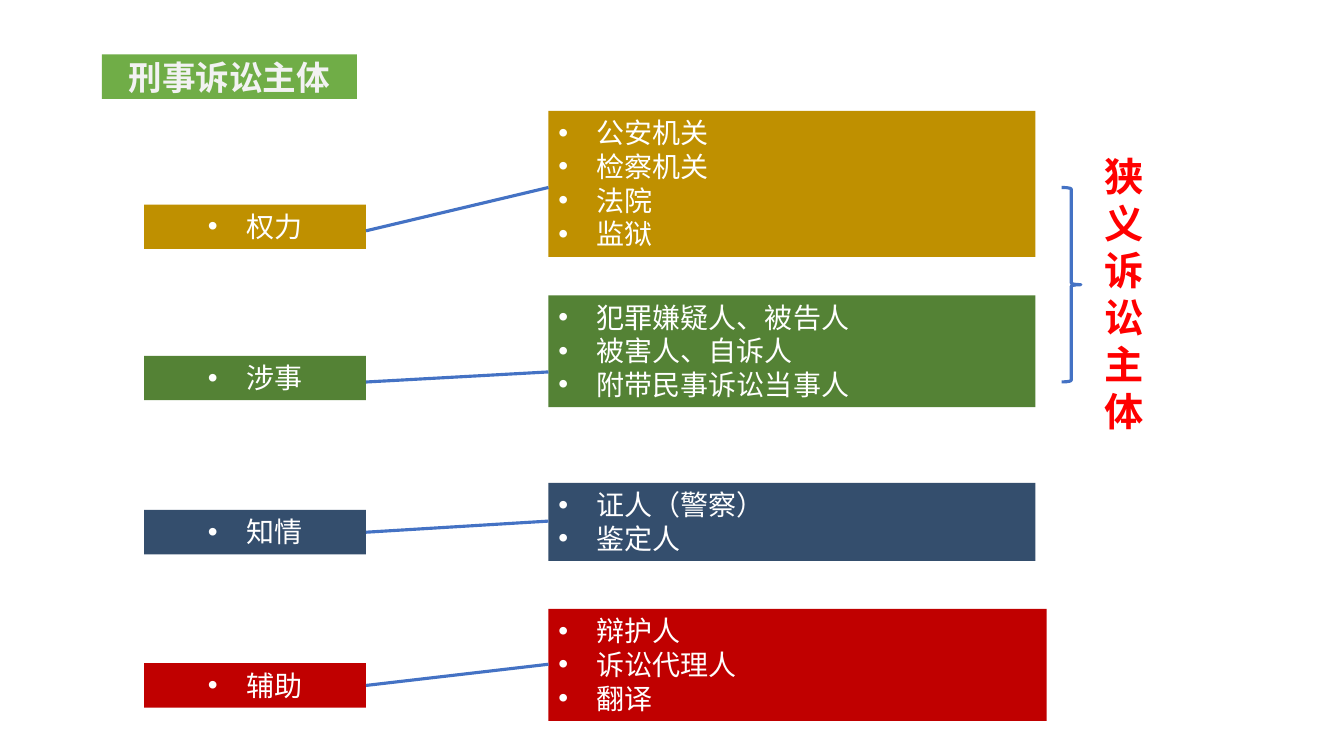
from typing import NamedTuple

from lxml.etree import SubElement
from pptx import Presentation
from pptx.dml.color import RGBColor
from pptx.enum.shapes import MSO_CONNECTOR, MSO_SHAPE
from pptx.enum.text import MSO_ANCHOR, PP_ALIGN
from pptx.oxml.ns import qn
from pptx.util import Inches, Pt

GOLD = RGBColor(0xBF, 0x90, 0x00)
GREEN = RGBColor(0x54, 0x82, 0x35)
NAVY = RGBColor(0x34, 0x4E, 0x6D)
CRIMSON = RGBColor(0xC0, 0x00, 0x00)
LEAF = RGBColor(0x70, 0xAD, 0x47)
BLUE = RGBColor(0x44, 0x72, 0xC4)
RED = RGBColor(0xFF, 0x00, 0x00)
WHITE = RGBColor(0xFF, 0xFF, 0xFF)
PALE = RGBColor(0xF2, 0xF2, 0xF2)

FONT = "Noto Sans CJK JP"
CELL = Inches(0.1)
LABEL_LEFT, LABEL_WIDTH, LABEL_HEIGHT = 14.3, 22, 4.4
LIST_LEFT, LIST_WIDTH = 54.4, 48.3
LINE_HEIGHT, LIST_PADDING = 3.37, 1


class Party(NamedTuple):
    """One group of participants, with offsets in grid cells from its top."""
    label: str
    members: list
    color: RGBColor
    top: float
    label_drop: float
    link_start: float
    link_end: float
    width: float = LIST_WIDTH


PARTIES = [
    Party("权力", ["公安机关", "检察机关", "法院", "监狱"], GOLD, 11, 9.3, 11.9, 7.6),
    Party("涉事", ["犯罪嫌疑人、被告人", "被害人、自诉人", "附带民事诉讼当事人"],
          GREEN, 29.3, 6, 8.6, 7.6),
    Party("知情", ["证人（警察）", "鉴定人"], NAVY, 47.9, 2.7, 4.9, 3.8),
    Party("辅助", ["辩护人", "诉讼代理人", "翻译"], CRIMSON, 60.4, 5.4, 7.6, 5.5, 49.4),
]


def grid(*cells):
    """Convert grid cells to slide lengths."""
    return [round(cell * CELL) for cell in cells]


def write(shape, lines, size=20, color=WHITE, bold=False, align=PP_ALIGN.LEFT,
          anchor=MSO_ANCHOR.TOP, bullets=False):
    """Fill a shape with formatted paragraphs."""
    frame = shape.text_frame
    frame.word_wrap = True
    frame.vertical_anchor = anchor
    frame.text = "\n".join(lines)
    for paragraph in frame.paragraphs:
        paragraph.alignment = align
        paragraph.line_spacing = Pt(size * 1.2)
        if bullets:
            properties = paragraph._p.get_or_add_pPr()
            properties.set("marL", str(Inches(0.38)))
            properties.set("indent", str(-Inches(0.38)))
            SubElement(properties, qn("a:buFont"), typeface="Arial")
            SubElement(properties, qn("a:buChar"), char="•")
        for run in paragraph.runs:
            run.font.size = Pt(size)
            run.font.bold = bold
            run.font.color.rgb = color
            run.font.name = FONT
            SubElement(run._r.get_or_add_rPr(), qn("a:ea"), typeface=FONT)


def add_block(slide, box, color, lines, align):
    """Draw a filled rectangle holding a bulleted list."""
    block = slide.shapes.add_shape(MSO_SHAPE.RECTANGLE, *grid(*box))
    block.shadow.inherit = False
    block.fill.solid()
    block.fill.fore_color.rgb = color
    block.line.fill.background()
    write(block, lines, align=align, bullets=True)


def add_link(slide, *ends):
    """Join a label to its list with a straight line."""
    link = slide.shapes.add_connector(MSO_CONNECTOR.STRAIGHT, *grid(*ends))
    link.line.color.rgb = BLUE
    link.line.width = Pt(2.25)
    SubElement(link._element.spPr, qn("a:effectLst"))


def add_party(slide, party):
    """Place a label, its member list and the link between them."""
    label_box = (LABEL_LEFT, party.top + party.label_drop, LABEL_WIDTH, LABEL_HEIGHT)
    list_height = len(party.members) * LINE_HEIGHT + LIST_PADDING
    list_box = (LIST_LEFT, party.top, party.width, list_height)
    add_block(slide, label_box, party.color, [party.label], PP_ALIGN.CENTER)
    add_block(slide, list_box, party.color, party.members, PP_ALIGN.LEFT)
    add_link(slide, LABEL_LEFT + LABEL_WIDTH, party.top + party.link_start,
             LIST_LEFT, party.top + party.link_end)


def add_heading(slide, box):
    """Shape the title placeholder as a rounded green tag."""
    heading = slide.shapes.title
    heading.left, heading.top, heading.width, heading.height = grid(*box)
    outline = SubElement(heading._element.spPr, qn("a:prstGeom"), prst="roundRect")
    SubElement(outline, qn("a:avLst"))
    heading.fill.solid()
    heading.fill.fore_color.rgb = LEAF
    write(heading, ["刑事诉讼主体"], size=24, color=PALE, bold=True,
          align=PP_ALIGN.CENTER, anchor=MSO_ANCHOR.MIDDLE)


def add_summary(slide, box):
    """Bracket the first two parties and name them in a narrow column."""
    left, top, width, height = box
    brace = slide.shapes.add_shape(MSO_SHAPE.RIGHT_BRACE, *grid(left, top, 1.9, height))
    brace.shadow.inherit = False
    brace.fill.background()
    brace.line.color.rgb = BLUE
    brace.line.width = Pt(2.25)
    caption = slide.shapes.add_textbox(*grid(left + 2.7, top - 4, width - 2.7, height + 10))
    write(caption, ["狭义诉讼主体"], size=28, color=RED, bold=True, align=PP_ALIGN.CENTER)


def main():
    """Build and save the slide."""
    deck = Presentation()
    deck.slide_width, deck.slide_height = Inches(13.33), Inches(7.5)
    slide = deck.slides.add_slide(deck.slide_layouts[5])
    add_heading(slide, (10.1, 5.4, 25.3, 4.4))
    for party in PARTIES:
        add_party(slide, party)
    power, involved = PARTIES[:2]
    brace_top = power.top + power.link_end
    brace_bottom = involved.top + involved.link_start
    add_summary(slide, (105.3, brace_top, 9.6, brace_bottom - brace_top))
    deck.save("out.pptx")


if __name__ == "__main__":
    main()
